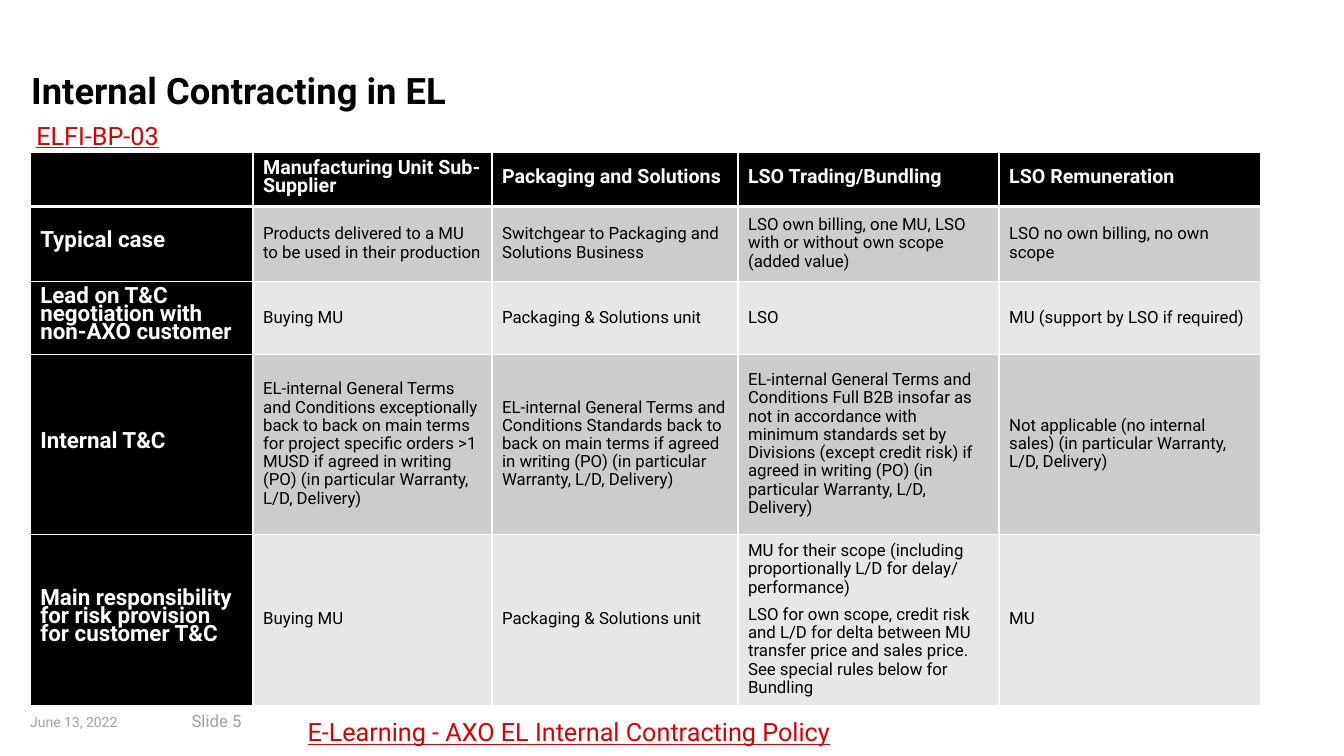
"""Build the internal contracting slide with its table of terms."""
from dataclasses import dataclass
from typing import Any

import lxml.etree
import pptx
import pptx.dml.color
import pptx.enum.text
import pptx.oxml.ns
import pptx.util

Inches = pptx.util.Inches
Pt = pptx.util.Pt
MSO_ANCHOR = pptx.enum.text.MSO_ANCHOR
PP_ALIGN = pptx.enum.text.PP_ALIGN


@dataclass(frozen=True)
class Theme:
    font: str = "Roboto"
    black: str = "000000"
    white: str = "FFFFFF"
    red: str = "D90000"
    muted: str = "A0A0A0"
    bands: tuple[str, str] = ("CCCCCC", "E7E7E7")
    title: float = 26
    link: float = 18
    label: float = 16
    heading: float = 14
    body: float = 12
    date: float = 10
    line: float = 13
    after: float = 6.5
    border: float = 1
    header_border: float = 3


@dataclass(frozen=True)
class Style:
    size: float
    color: str
    bold: bool = False
    underline: bool = False


@dataclass(frozen=True)
class TextItem:
    text: str
    box: tuple[float, float, float, float]
    style: Style
    anchor: Any = MSO_ANCHOR.TOP
    inset: float = 0


THEME = Theme()
LINK = Style(THEME.link, THEME.red, underline=True)
HEADING = Style(THEME.heading, THEME.white, bold=True)
LABEL = Style(THEME.label, THEME.white, bold=True)
BODY = Style(THEME.body, THEME.black)

TITLE = TextItem("Internal Contracting in EL", (0.31, 0.68, 12.72, 0.45),
                 Style(THEME.title, THEME.black, bold=True))
SUBTITLE = TextItem("ELFI-BP-03", (0.36, 1.19, 12.6, 0.55), LINK)
TEXT_BOXES = (
    TextItem("June 13, 2022", (0.3, 7.1, 1.27, 0.13),
             Style(THEME.date, THEME.muted), MSO_ANCHOR.MIDDLE),
    TextItem("Slide 5", (1.9, 7.08, 0.74, 0.15),
             Style(THEME.body, THEME.muted), MSO_ANCHOR.MIDDLE),
    TextItem("E-Learning - AXO EL Internal Contracting Policy",
             (2.97, 7.03, 5.89, 0.45), LINK, inset=0.08),
)

TABLE_ORIGIN = (0.3, 1.51)
COLUMN_WIDTHS = (2.21, 2.37, 2.44, 2.59, 2.59)
ROW_HEIGHTS = (0.54, 0.74, 0.73, 1.78, 1.7)
TERMS = "EL-internal General Terms and Conditions"
WARRANTY = "(in particular Warranty, L/D, Delivery)"
AGREED = f"if agreed in writing (PO) {WARRANTY}"
ROWS = (
    ("", "Manufacturing Unit Sub-Supplier", "Packaging and Solutions",
     "LSO Trading/Bundling", "LSO Remuneration"),
    ("Typical case",
     "Products delivered to a MU to be used in their production",
     "Switchgear to Packaging and Solutions Business",
     "LSO own billing, one MU, LSO with or without own scope (added value)",
     "LSO no own billing, no own scope"),
    ("Lead on T&C negotiation with non-AXO customer", "Buying MU",
     "Packaging & Solutions unit", "LSO", "MU (support by LSO if required)"),
    ("Internal T&C",
     f"{TERMS} exceptionally back to back on main terms for project "
     f"specific orders >1 MUSD {AGREED}",
     f"{TERMS} Standards back to back on main terms {AGREED}",
     f"{TERMS} Full B2B insofar as not in accordance with minimum standards "
     f"set by Divisions (except credit risk) {AGREED}",
     f"Not applicable (no internal sales) {WARRANTY}"),
    ("Main responsibility for risk provision for customer T&C", "Buying MU",
     "Packaging & Solutions unit",
     "MU for their scope (including proportionally L/D for delay/ performance)\n"
     "LSO for own scope, credit risk and L/D for delta between MU transfer "
     "price and sales price. See special rules below for Bundling",
     "MU"),
)


def set_attrs(obj: Any, values: dict[str, Any]) -> None:
    """Set every named attribute on an object."""
    for name, value in values.items():
        setattr(obj, name, value)


def write_text(tf: Any, text: str, style: Style, layout: dict[str, Any]) -> None:
    """Fill a text frame with one styled paragraph per line."""
    tf.text = text
    for p in tf.paragraphs:
        set_attrs(p, layout)
        for r in p.runs:
            set_attrs(r.font, {"name": THEME.font, "size": Pt(style.size),
                               "bold": style.bold, "underline": style.underline})
            r.font.color.rgb = pptx.dml.color.RGBColor.from_string(style.color)


def place_text(sp: Any, item: TextItem) -> None:
    """Position a text shape and write its content."""
    set_attrs(sp, dict(zip(("left", "top", "width", "height"), map(Inches, item.box))))
    tf = sp.text_frame
    sides = ("margin_left", "margin_top", "margin_right", "margin_bottom")
    set_attrs(tf, dict.fromkeys(sides, Inches(item.inset)))
    set_attrs(tf, {"word_wrap": True, "vertical_anchor": item.anchor,
                   "auto_size": pptx.enum.text.MSO_AUTO_SIZE.NONE})
    write_text(tf, item.text, item.style,
               {"alignment": PP_ALIGN.LEFT, "space_before": Pt(0), "line_spacing": 1.0})


def add_border(cell: Any, side: str, width: float) -> None:
    """Add a white line to one side of a cell."""
    qn = pptx.oxml.ns.qn
    ln = lxml.etree.SubElement(cell._tc.get_or_add_tcPr(), qn(f"a:ln{side}"),
                               w=str(int(Pt(width))))
    fill = lxml.etree.SubElement(ln, qn("a:solidFill"))
    lxml.etree.SubElement(fill, qn("a:srgbClr"), val=THEME.white)


def format_cell(cell: Any, row: int, column: int, text: str) -> None:
    """Write and colour one table cell according to its place."""
    style = HEADING if row == 0 else LABEL if column == 0 else BODY
    color = THEME.bands[(row - 1) % 2] if style is BODY else THEME.black
    heavy_side = {0: "B", 1: "T"}.get(row)
    for side in "LRTB":
        add_border(cell, side, THEME.header_border if side == heavy_side else THEME.border)
    cell.fill.solid()
    cell.fill.fore_color.rgb = pptx.dml.color.RGBColor.from_string(color)
    cell.vertical_anchor = MSO_ANCHOR.MIDDLE
    write_text(cell.text_frame, text, style,
               {"line_spacing": Pt(THEME.line), "space_after": Pt(THEME.after)})


def add_terms_table(s: Any) -> None:
    """Add the table of contracting cases."""
    size = (sum(COLUMN_WIDTHS), sum(ROW_HEIGHTS))
    table = s.shapes.add_table(len(ROWS), len(COLUMN_WIDTHS),
                               *map(Inches, TABLE_ORIGIN + size)).table
    set_attrs(table, {"first_row": False, "horz_banding": False})
    for column, width in zip(table.columns, COLUMN_WIDTHS):
        column.width = Inches(width)
    for i, (height, texts) in enumerate(zip(ROW_HEIGHTS, ROWS)):
        table.rows[i].height = Inches(height)
        for j, text in enumerate(texts):
            format_cell(table.cell(i, j), i, j, text)


def main() -> None:
    """Build and save the presentation."""
    prs = pptx.Presentation()
    set_attrs(prs, {"slide_width": Inches(13.33), "slide_height": Inches(7.5)})
    s = prs.slides.add_slide(prs.slide_layouts[0])
    place_text(s.shapes.title, TITLE)
    place_text(s.placeholders[1], SUBTITLE)
    add_terms_table(s)
    for item in TEXT_BOXES:
        place_text(s.shapes.add_textbox(*map(Inches, item.box)), item)
    prs.save("out.pptx")


if __name__ == "__main__":
    main()
